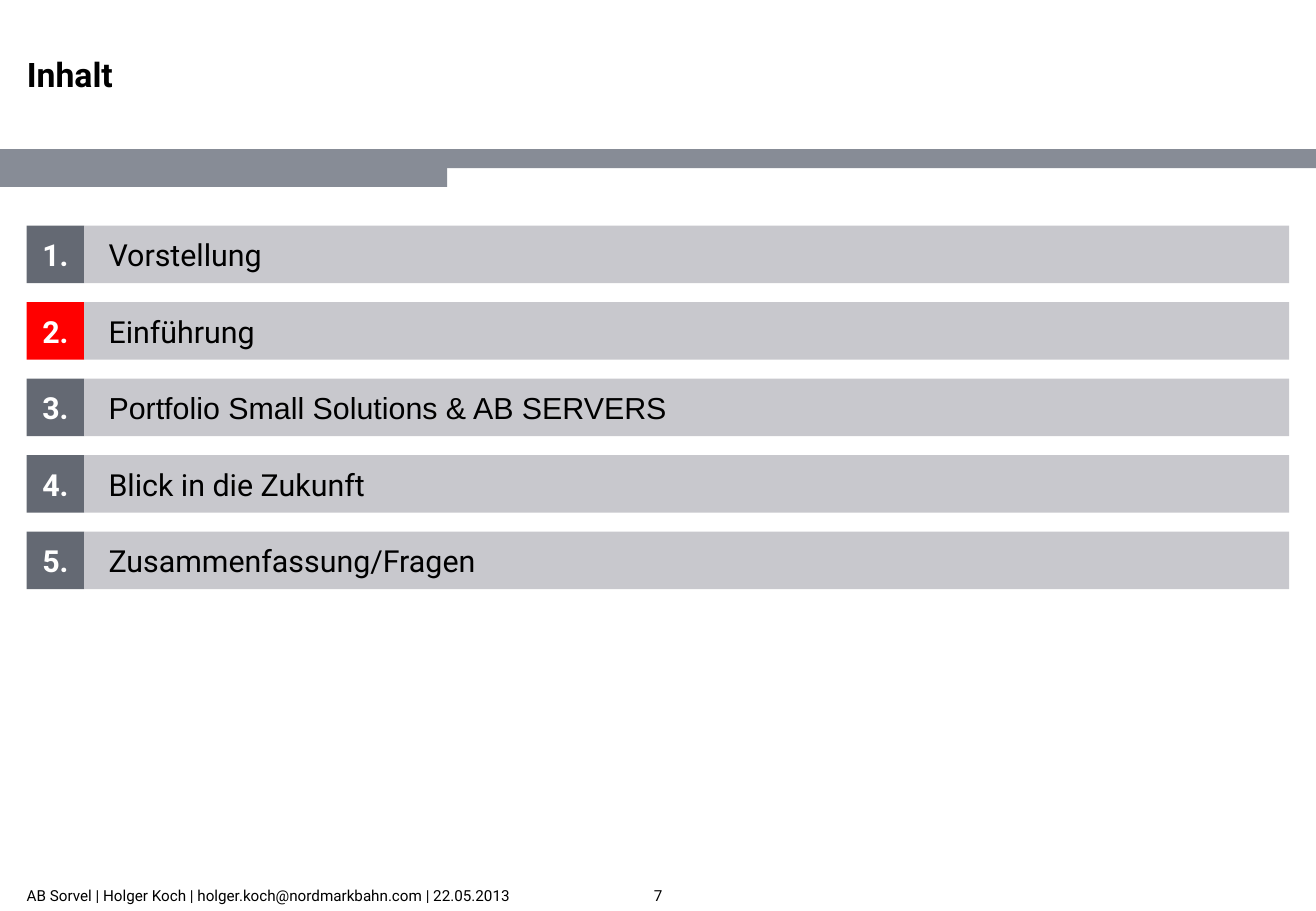
from pptx import Presentation
from pptx.dml.color import RGBColor
from pptx.enum.shapes import MSO_SHAPE
from pptx.enum.text import MSO_ANCHOR, PP_ALIGN
from pptx.util import Cm, Pt

RECTANGLE = MSO_SHAPE.RECTANGLE
TOP, MIDDLE = MSO_ANCHOR.TOP, MSO_ANCHOR.MIDDLE
LEFT, CENTER = PP_ALIGN.LEFT, PP_ALIGN.CENTER

COLORS = {
    "black": "000000",
    "white": "FFFFFF",
    "band": "878C96",
    "number": "646973",
    "current": "FF0000",
    "label": "C8C8CD",
}

WIDTH, HEIGHT = 27.51, 19.05
MARGIN = 0.56
ROW_TOP, ROW_HEIGHT, ROW_PITCH = 4.72, 1.2, 1.6
CURRENT_TOPIC = 2
# Topic and its font
TOPICS = [
    ("Vorstellung", "Roboto"),
    ("Einführung", "Roboto"),
    ("Portfolio Small Solutions & AB SERVERS", "Arial"),
    ("Blick in die Zukunft", "Roboto"),
    ("Zusammenfassung/Fragen", "Roboto"),
]


def color(name):
    return RGBColor.from_string(COLORS[name])


def write_text(shape, text, size=18, font="Roboto", ink="black", bold=False,
               align=LEFT, anchor=MIDDLE, inset_x=0, inset_y=0):
    frame = shape.text_frame
    frame.word_wrap = True
    frame.vertical_anchor = anchor
    frame.margin_left = frame.margin_right = Cm(inset_x)
    frame.margin_top = frame.margin_bottom = Cm(inset_y)
    paragraph = frame.paragraphs[0]
    paragraph.alignment = align
    run = paragraph.add_run()
    run.text = text
    run.font.size = Pt(size)
    run.font.name = font
    run.font.bold = bold
    run.font.color.rgb = color(ink)


class AgendaSlide:
    def __init__(self, presentation):
        self.slide = presentation.slides.add_slide(presentation.slide_layouts[5])

    def title(self, text, left, top, width, height):
        shape = self.slide.shapes.title
        shape.left, shape.top = Cm(left), Cm(top)
        shape.width, shape.height = Cm(width), Cm(height)
        write_text(shape, text, size=20, bold=True, anchor=TOP)

    def rectangle(self, left, top, width, height, fill):
        shape = self.slide.shapes.add_shape(
            RECTANGLE, Cm(left), Cm(top), Cm(width), Cm(height))
        shape.shadow.inherit = False
        shape.fill.solid()
        shape.fill.fore_color.rgb = color(fill)
        shape.line.fill.background()
        return shape

    def text_box(self, text, left, top, width, height, **style):
        shape = self.slide.shapes.add_textbox(
            Cm(left), Cm(top), Cm(width), Cm(height))
        write_text(shape, text, **style)

    def topic(self, number, text, font):
        top = ROW_TOP + (number - 1) * ROW_PITCH
        label_left = MARGIN + ROW_HEIGHT
        fill = "current" if number == CURRENT_TOPIC else "number"
        box = self.rectangle(MARGIN, top, ROW_HEIGHT, ROW_HEIGHT, fill)
        write_text(box, f"{number}.", ink="white", bold=True, align=CENTER,
                   inset_x=0.25, inset_y=0.13)
        label = self.rectangle(
            label_left, top, WIDTH - MARGIN - label_left, ROW_HEIGHT, "label")
        write_text(label, text, font=font, inset_x=0.51, inset_y=0.13)


def main():
    presentation = Presentation()
    presentation.slide_width, presentation.slide_height = Cm(WIDTH), Cm(HEIGHT)
    agenda = AgendaSlide(presentation)

    # Header band and title
    agenda.rectangle(0, 3.12, WIDTH, 0.4, "band")
    agenda.rectangle(0, 3.12, 9.35, 0.79, "band")
    agenda.title("Inhalt", MARGIN, 1.12, 19.2, 1.8)

    # Numbered topics
    for number, (text, font) in enumerate(TOPICS, start=1):
        agenda.topic(number, text, font)

    # Footer
    agenda.text_box("AB Sorvel | Holger Koch | holger.koch@nordmarkbahn.com | 22.05.2013",
                    MARGIN, 18.6, 10.5, 0.25, size=9)
    agenda.text_box("7", 11.12, 18.6, 5.28, 0.25, size=9, align=CENTER)

    presentation.save("out.pptx")


if __name__ == "__main__":
    main()
